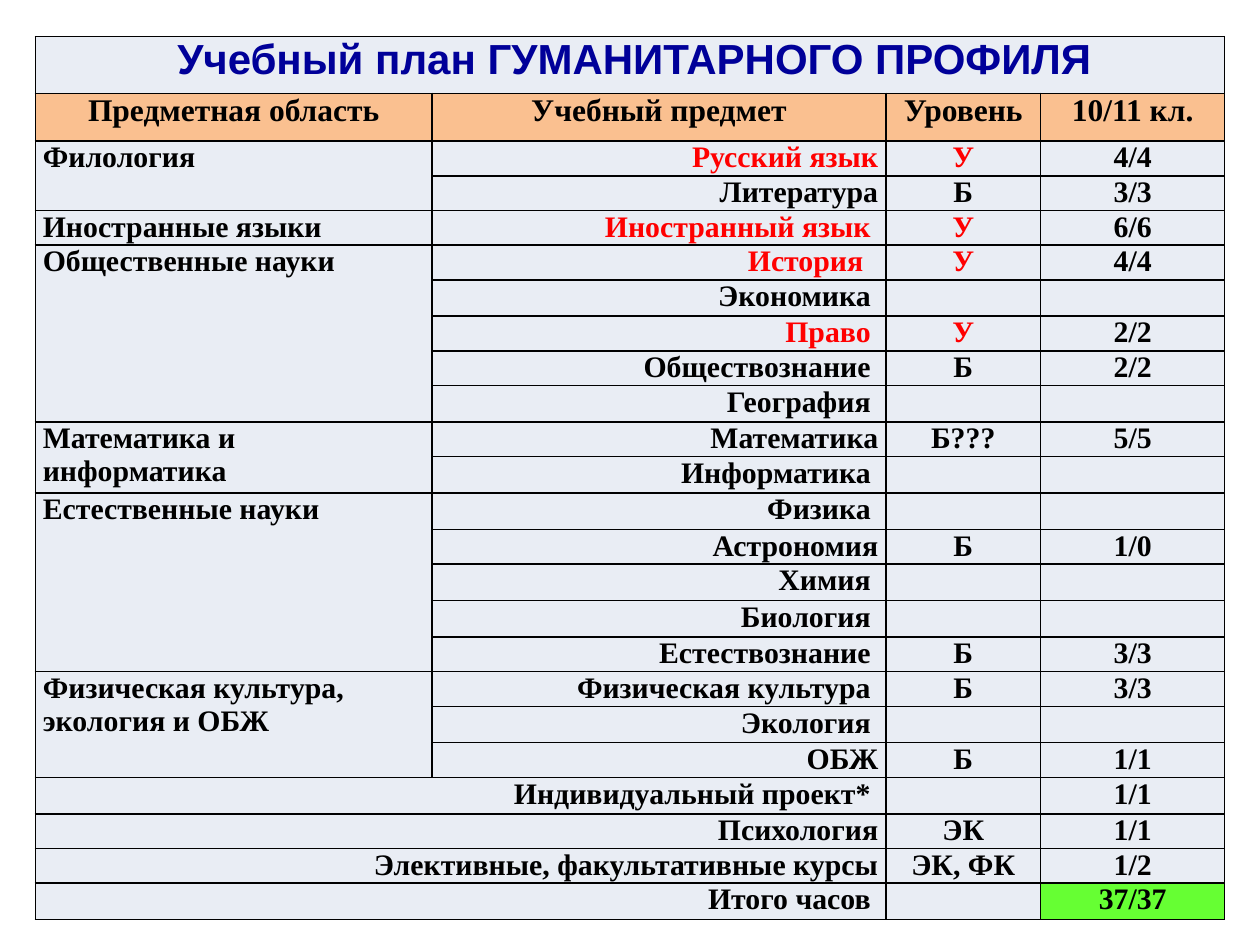
from lxml.etree import SubElement
from pptx import Presentation
from pptx.dml.color import RGBColor
from pptx.enum.text import PP_ALIGN
from pptx.oxml.ns import qn
from pptx.util import Inches, Pt

COLORS = {
    "text": "000000", "title": "000099", "profile": "FF0000",
    "body": "E9EDF4", "header": "FAC090", "total": "66FF33", "border": "000000",
}
TITLE = "Учебный план ГУМАНИТАРНОГО ПРОФИЛЯ"
HEADERS = ["Предметная область", "Учебный предмет", "Уровень", "10/11 кл."]
AREAS = [
    ("Филология", [("Русский язык", "У", "4/4"), ("Литература", "Б", "3/3")]),
    ("Иностранные языки", [("Иностранный язык ", "У", "6/6")]),
    ("Общественные науки", [
        ("История  ", "У", "4/4"), ("Экономика ", "", ""), ("Право ", "У", "2/2"),
        ("Обществознание ", "Б", "2/2"), ("География ", "", ""),
    ]),
    ("Математика и информатика", [("Математика", "Б???", "5/5"), ("Информатика ", "", "")]),
    ("Естественные науки", [
        ("Физика ", "", ""), ("Астрономия", "Б", "1/0"), ("Химия ", "", ""),
        ("Биология ", "", ""), ("Естествознание ", "Б", "3/3"),
    ]),
    ("Физическая культура, экология и ОБЖ", [
        ("Физическая культура ", "Б", "3/3"), ("Экология ", "", ""), ("ОБЖ", "Б", "1/1"),
    ]),
]
EXTRAS = [
    ("Индивидуальный проект* ", "", "1/1"),
    ("Психология", "ЭК", "1/1"),
    ("Элективные, факультативные курсы", "ЭК, ФК", "1/2"),
    ("Итого часов ", "", "37/37"),
]
COLUMN_WIDTHS = [3.15, 3.6, 1.23, 1.46]
TITLE_HEIGHT, HEADER_HEIGHT, BODY_HEIGHT = 0.45, 0.38, 6.06
BODY_SIZE = 17


def format_cell(cell, fill="body"):
    cell.margin_left = cell.margin_right = Inches(0.06)
    cell.margin_top = cell.margin_bottom = 0
    properties = cell._tc.get_or_add_tcPr()
    for side in ("a:lnL", "a:lnR", "a:lnT", "a:lnB"):
        border = SubElement(properties, qn(side), w=str(Pt(1)))
        border_fill = SubElement(border, qn("a:solidFill"))
        SubElement(border_fill, qn("a:srgbClr"), val=COLORS["border"])
    cell.fill.solid()
    cell.fill.fore_color.rgb = RGBColor.from_string(COLORS[fill])


def write(cell, text, align=PP_ALIGN.CENTER, size=BODY_SIZE, color="text", font="Times New Roman"):
    paragraph = cell.text_frame.paragraphs[0]
    paragraph.alignment = align
    if not text:
        SubElement(paragraph._p, qn("a:endParaRPr"), sz=str(size * 100))
        return
    run = paragraph.add_run()
    run.text = text
    run.font.name = font
    run.font.size = Pt(size)
    run.font.bold = True
    run.font.color.rgb = RGBColor.from_string(COLORS[color])


def write_subject(plan, row, entry, subject_column):
    subject, level, hours = entry
    color = "profile" if level == "У" else "text"
    write(plan.cell(row, subject_column), subject, PP_ALIGN.RIGHT, color=color)
    write(plan.cell(row, 2), level, color=color)
    write(plan.cell(row, 3), hours)


def main():
    """Build the curriculum table slide."""
    presentation = Presentation()
    presentation.slide_width, presentation.slide_height = Inches(10), Inches(7.5)
    slide = presentation.slides.add_slide(presentation.slide_layouts[6])

    body_rows = sum(len(subjects) for _, subjects in AREAS) + len(EXTRAS)
    row_heights = [TITLE_HEIGHT, HEADER_HEIGHT] + [BODY_HEIGHT / body_rows] * body_rows
    plan = slide.shapes.add_table(
        len(row_heights), len(COLUMN_WIDTHS), Inches(0.28), Inches(0.29),
        Inches(sum(COLUMN_WIDTHS)), Inches(sum(row_heights)),
    ).table
    plan.first_row = plan.horz_banding = False
    for column, width in zip(plan.columns, COLUMN_WIDTHS):
        column.width = Inches(width)
    for row, height in zip(plan.rows, row_heights):
        row.height = Inches(height)
    last_row, last_column = len(row_heights) - 1, len(COLUMN_WIDTHS) - 1
    special_fills = {(1, column): "header" for column in range(len(HEADERS))}
    special_fills[last_row, last_column] = "total"
    for row in range(len(row_heights)):
        for column in range(len(COLUMN_WIDTHS)):
            format_cell(plan.cell(row, column), special_fills.get((row, column), "body"))

    title = plan.cell(0, 0)
    title.merge(plan.cell(0, last_column))
    for text, size in ((" ", 18), (TITLE, 24)):
        write(title, text, size=size, color="title", font="Arial")
    for column, header in enumerate(HEADERS):
        write(plan.cell(1, column), header, size=18)

    row = 2
    for area, subjects in AREAS:
        area_cell = plan.cell(row, 0)
        if len(subjects) > 1:
            area_cell.merge(plan.cell(row + len(subjects) - 1, 0))
        write(area_cell, area, PP_ALIGN.LEFT)
        for entry in subjects:
            write_subject(plan, row, entry, 1)
            row += 1
    for row, entry in enumerate(EXTRAS, row):
        plan.cell(row, 0).merge(plan.cell(row, 1))
        write_subject(plan, row, entry, 0)

    presentation.save("out.pptx")


if __name__ == "__main__":
    main()
